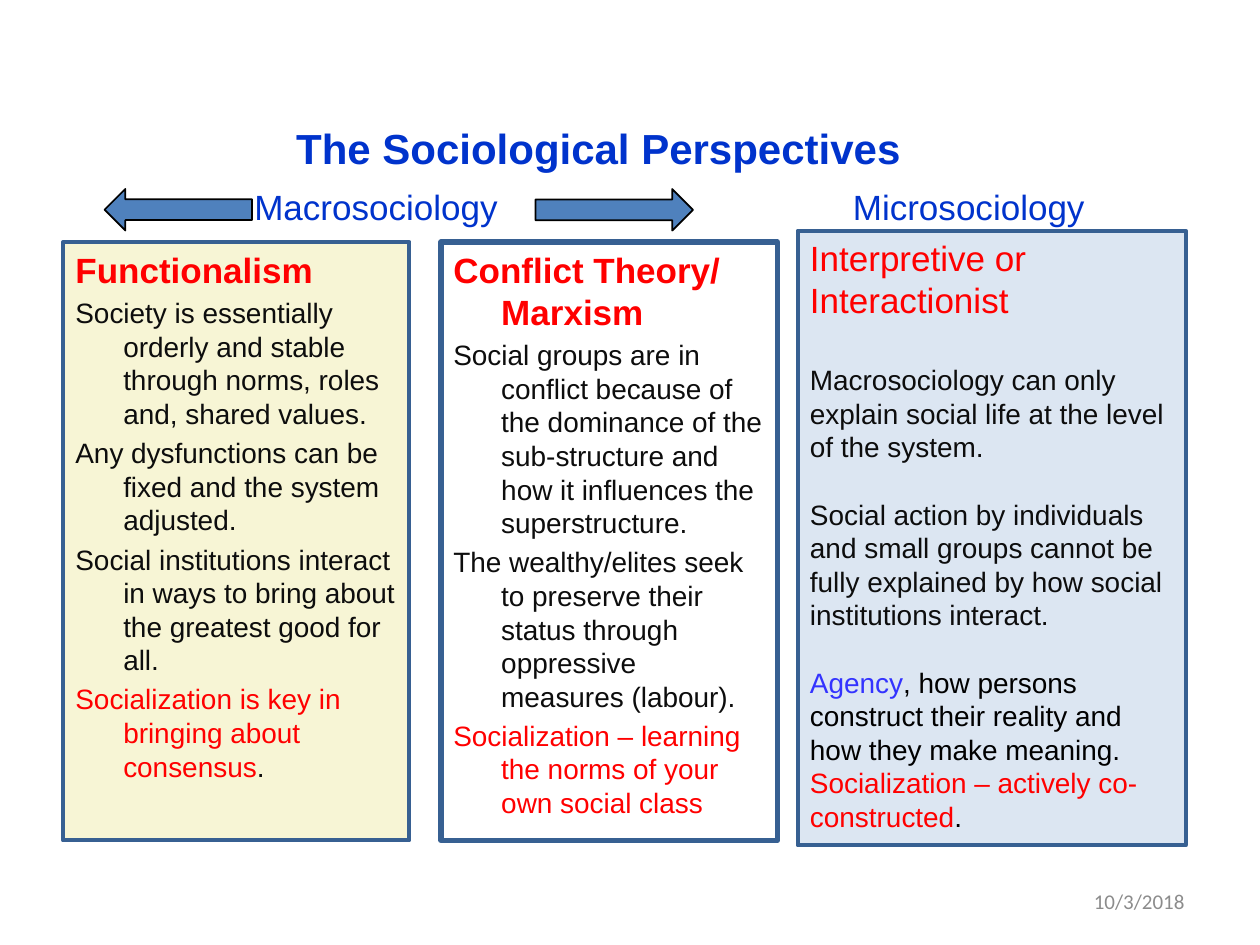
from pptx import Presentation
from pptx.dml.color import RGBColor
from pptx.enum.shapes import MSO_SHAPE
from pptx.enum.text import MSO_ANCHOR, PP_ALIGN
from pptx.util import Inches, Pt

BLUE, RED, DARK, BLACK = "0033CC", "FF0000", "0D0D0D", "000000"
OUTLINE, ARROW_BLUE = "376092", "4F81BD"


def rgb(color):
    return RGBColor.from_string(color)


def add_text(shape, paragraphs, anchor=MSO_ANCHOR.TOP, align=PP_ALIGN.LEFT, font="Arial"):
    """Write paragraphs, each a list of (text, size, color, bold) runs; return them."""
    frame = shape.text_frame
    frame.word_wrap = True
    frame.vertical_anchor = anchor
    for number, runs in enumerate(paragraphs):
        paragraph = frame.add_paragraph() if number else frame.paragraphs[0]
        paragraph.alignment = align
        for text, size, color, bold in runs:
            run = paragraph.add_run()
            run.text = text
            run.font.name = font
            run.font.size = Pt(size)
            run.font.bold = bold
            run.font.color.rgb = rgb(color)
    return frame.paragraphs


prs = Presentation()
prs.slide_width, prs.slide_height = Inches(10), Inches(7.5)
slide = prs.slides.add_slide(prs.slide_layouts[6])
shapes = slide.shapes

# Title, level headings and date
labels = [
    ("The Sociological Perspectives", (0.5, 0.92, 8.5, 0.5), 24, BLUE, True,
     MSO_ANCHOR.MIDDLE, PP_ALIGN.CENTER, "Arial"),
    ("Macrosociology", (1.92, 1.42, 2.67, 0.44), 20, BLUE, False,
     MSO_ANCHOR.TOP, PP_ALIGN.LEFT, "Arial"),
    ("Microsociology", (6.67, 1.42, 2.58, 0.44), 20, BLUE, False,
     MSO_ANCHOR.TOP, PP_ALIGN.LEFT, "Arial"),
    ("10/3/2018", (7.17, 6.95, 2.33, 0.4), 12, "8C8C8C", False,
     MSO_ANCHOR.MIDDLE, PP_ALIGN.RIGHT, "Calibri"),
]
for text, box, size, color, bold, anchor, align, font in labels:
    label = shapes.add_textbox(*map(Inches, box))
    add_text(label, [[(text, size, color, bold)]], anchor, align, font)

# The three perspectives
functionalism = [
    [("Functionalism", 20, RED, True)],
    [("Society is essentially orderly and stable through norms, roles and, "
      "shared values.", 16, DARK, False)],
    [("Any dysfunctions can be fixed and the system adjusted.", 16, DARK, False)],
    [("Social institutions interact in ways to bring about the greatest good "
      "for all.", 16, DARK, False)],
    [("Socialization is key in bringing about consensus", 16, RED, False),
     (".", 16, DARK, False)],
]
conflict_theory = [
    [("Conflict Theory/ Marxism", 20, RED, True)],
    [("Social groups are in conflict because of the dominance of the "
      "sub-structure and how it influences the superstructure.", 16, DARK, False)],
    [("The wealthy/elites seek to preserve their status through oppressive "
      "measures (labour).", 16, DARK, False)],
    [("Socialization – learning the norms of your own social class", 16, RED, False)],
]
interactionism = [
    [("Interpretive or Interactionist", 20, RED, False)],
    [("Macrosociology can only explain social life at the level of the system.",
      16, DARK, False)],
    [("Social action by individuals and small groups cannot be fully explained "
      "by how social institutions interact.", 16, DARK, False)],
    [("Agency", 16, "3333FF", False),
     (", how persons construct their reality and how they make meaning.",
      16, BLACK, False)],
    [("Socialization – actively co-constructed", 16, RED, False),
     (".", 16, BLACK, False)],
]
perspectives = [
    (functionalism, (0.5, 1.92, 2.75, 4.75), "F7F5D5", 2.25, True),
    (conflict_theory, (3.5, 1.92, 2.67, 4.75), None, 3, True),
    (interactionism, (6.33, 1.83, 3.08, 4.88), "DCE6F2", 2.25, False),
]
for content, box, fill, line_width, hanging in perspectives:
    panel = shapes.add_shape(MSO_SHAPE.RECTANGLE, *map(Inches, box))
    panel.shadow.inherit = False
    if fill:
        panel.fill.solid()
        panel.fill.fore_color.rgb = rgb(fill)
    else:
        panel.fill.background()
    panel.line.color.rgb = rgb(OUTLINE)
    panel.line.width = Pt(line_width)
    paragraphs = add_text(panel, content)
    if hanging:
        for paragraph, runs in zip(paragraphs, content):
            paragraph.space_before = Pt(0.2 * runs[0][1])
            indents = paragraph._p.get_or_add_pPr()
            indents.set("marL", str(Inches(0.38)))
            indents.set("indent", str(Inches(-0.38)))
    else:
        for paragraph, gap in zip(paragraphs, (24, 19.2, 19.2)):
            paragraph.space_after = Pt(gap)

# Arrows from the macro heading to both sides
for left, width, rotation in [(0.83, 1.17, 0), (4.25, 1.25, 180)]:
    arrow = shapes.add_shape(MSO_SHAPE.LEFT_ARROW, Inches(left), Inches(1.5),
                             Inches(width), Inches(0.33))
    arrow.rotation = rotation
    arrow.shadow.inherit = False
    arrow.fill.solid()
    arrow.fill.fore_color.rgb = rgb(ARROW_BLUE)
    arrow.line.color.rgb = rgb(BLACK)
    arrow.line.width = Pt(1)

prs.save("out.pptx")
